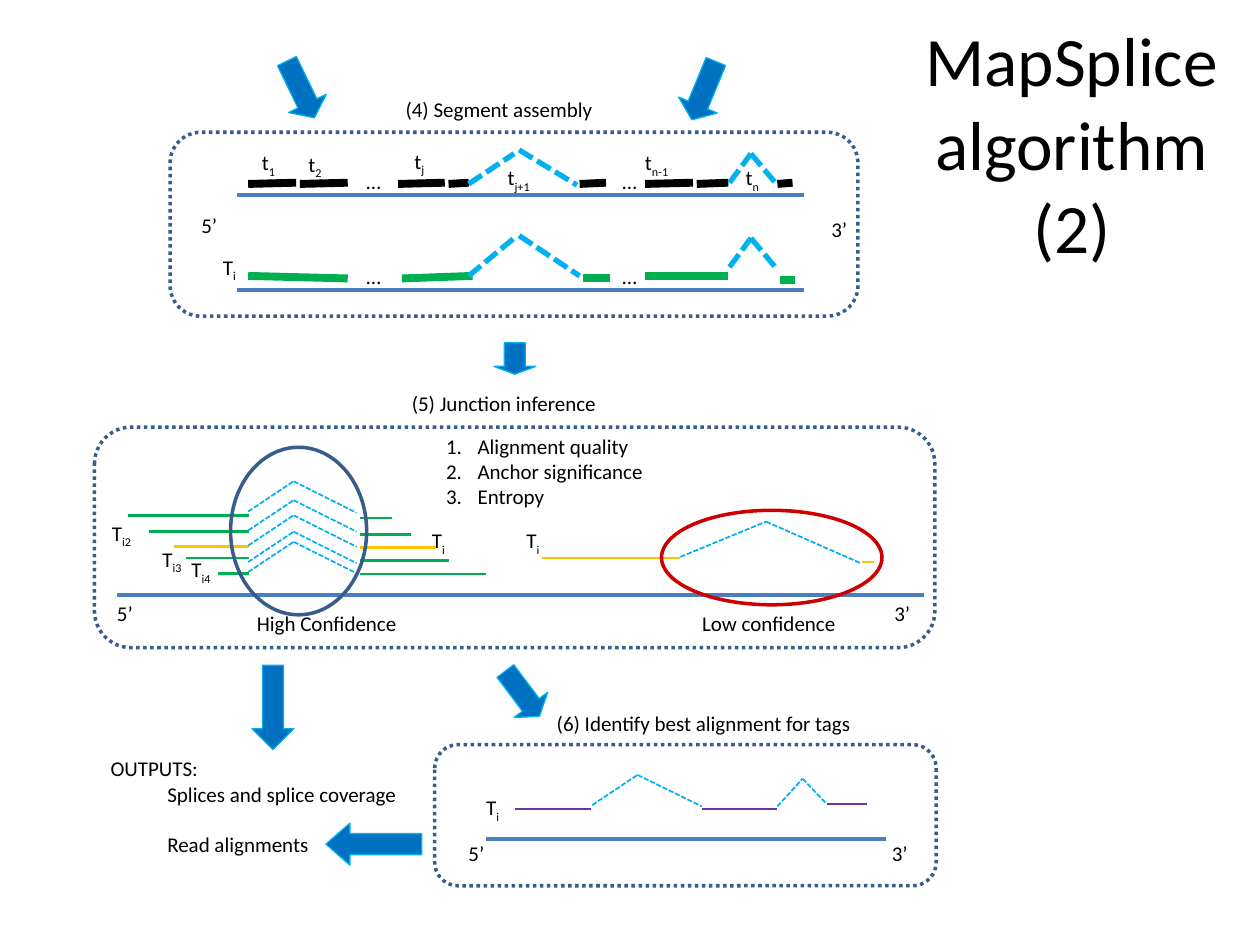
from lxml.etree import SubElement
from pptx import Presentation
from pptx.dml.color import RGBColor
from pptx.enum.dml import MSO_LINE
from pptx.enum.shapes import MSO_CONNECTOR, MSO_SHAPE as SHAPE
from pptx.enum.text import MSO_ANCHOR, MSO_AUTO_SIZE, PP_ALIGN
from pptx.oxml.ns import qn
from pptx.util import Inches, Pt

COLS, ROWS = 100, 75
C = {"text": "000000", "genome": "4B7EBC", "frame": "385D8A", "tag": "000000",
     "green": "00B050", "gold": "FFC000", "purple": "7030A0", "red": "CC0000",
     "splice": "00B0F0", "arrow": "0070C0"}

prs = Presentation()
prs.slide_width, prs.slide_height = Inches(10), Inches(7.5)
s = prs.slides.add_slide(prs.slide_layouts[1])


def col(n):
    return round(prs.slide_width * n / COLS)


def row(n):
    return round(prs.slide_height * n / ROWS)


def place(box, x, y, w, h):
    return col(box[0] + x), row(box[1] + y), col(w), row(h)


def style(obj, values):
    for name, value in values.items():
        setattr(obj, name, value)


def write(p, text, size=12):
    base, _, sub = text.partition("_")
    for part, lowered in ((base, False), (sub, True)):
        if part:
            r = p.add_run()
            r.text = part
            style(r.font, {"size": Pt(size), "name": "Calibri"})
            r.font.color.rgb = RGBColor.from_string(C["text"])
            if lowered:
                r._r.get_or_add_rPr().set("baseline", "-25000")


def label(box, text, x, y, w=5.6, h=3):
    tf = s.shapes.add_textbox(*place(box, x, y, w, h)).text_frame
    tf.word_wrap = True
    write(tf.paragraphs[0], text)
    return tf


def labels(box, items):
    for item in items:
        label(box, *item)


def set_line(obj, color, width, dash=None):
    style(obj.line, {"width": Pt(width), "dash_style": dash})
    obj.line.color.rgb = RGBColor.from_string(C[color])


def path_line(box, points, color, width, dash=None):
    for (x1, y1), (x2, y2) in zip(points, points[1:]):
        c = s.shapes.add_connector(MSO_CONNECTOR.STRAIGHT, *place(box, x1, y1, 0, 0)[:2],
                                   *place(box, x2, y2, 0, 0)[:2])
        set_line(c, color, width, dash)
        SubElement(c._element.spPr, qn("a:effectLst"))


def splice(box, points, width=1):
    path_line(box, points, "splice", width, MSO_LINE.SQUARE_DOT)


def outline(box, kind, x, y, w, h, color, dash=None):
    sp = s.shapes.add_shape(kind, *place(box, x, y, w, h))
    sp.shadow.inherit = False
    sp.fill.background()
    set_line(sp, color, 2, dash)


def frame(box, caption, x, y, w):
    outline(box, SHAPE.ROUNDED_RECTANGLE, 0, 0, *box[2:], "frame", MSO_LINE.ROUND_DOT)
    label(box, caption, x, y, w)


def genome(box, x1, x2, y):
    path_line(box, [(x1, y), (x2, y)], "genome", 2.25)


def arrow(x, y, h, head, angle=0):
    sp = s.shapes.add_shape(SHAPE.DOWN_ARROW, col(x), row(y), col(3.33), row(h))
    sp.shadow.inherit = False
    sp.rotation = angle
    sp.adjustments[1] = head
    sp.fill.solid()
    sp.fill.fore_color.rgb = RGBColor.from_string(C["arrow"])
    set_line(sp, "splice", 0.75)


def segment_assembly(box):
    for y in (5, 12.5):
        genome(box, 5.3, 50.3, y)
        labels(box, [("…", x, y - 2.6, 2.2) for x in (14.6, 34.9)])
    for x1, x2 in ((6.2, 10), (10.3, 14.1), (18.1, 21.8), (22.1, 23.7),
                   (32.5, 34.6), (37.7, 41.5), (41.8, 44.3), (48.2, 49.4)):
        path_line(box, [(x1, 4.1), (x2, 4)], "tag", 4.5)
    for x1, y1, x2, y2 in ((6.2, 11.4, 14.1, 11.6), (18.4, 11.6, 24, 11.4),
                           (32.8, 11.6, 34.9, 11.6), (37.7, 11.4, 44.3, 11.4),
                           (48.4, 11.7, 49.6, 11.7)):
        path_line(box, [(x1, y1), (x2, y2)], "green", 4.5)
    for points in ([(23.7, 4.1), (27.3, 1.7)], [(27.7, 1.4), (32.3, 4.2)],
                   [(44.4, 4), (46.1, 1.7), (48.2, 4.2)],
                   [(23.7, 11.4), (27.3, 8.4)], [(27.7, 8.2), (32.5, 11.4)],
                   [(44.4, 10.7), (46.1, 8.4), (48.2, 10.9)]):
        splice(box, points, 3)
    labels(box, [("t_1", 6.3, 0.9), ("t_2", 10, 1), ("t_j", 18.4, 0.8), ("t_j+1", 25.8, 2.1),
                 ("t_n-1", 36.7, 0.9), ("t_n", 44.7, 2.1), ("T_i", 3.2, 9.2),
                 ("5’", 1.5, 5.9), ("3’", 51.5, 6.2)])
    frame(box, "(4) Segment assembly", 17.7, -3.3, 19.2)


def junction_inference(box):
    genome(box, 1.8, 65.8, 13.3)
    for x1, y1, x2, y2, peak, color in ((2.7, 7, 23.6, 7.2, 4.3, "green"),
                                        (4.3, 8.3, 25.1, 8.5, 5.8, "green"),
                                        (6.3, 9.5, 27.1, 9.55, 7, "gold"),
                                        (7.3, 10.4, 28.1, 10.6, 8.3, "green"),
                                        (9.8, 11.6, 31.1, 11.65, 9.1, "green")):
        path_line(box, [(x1, y1), (12.3, y1)], color, 1.5)
        path_line(box, [(21.1, y2), (x2, y2)], color, 1.5)
        splice(box, [(12.2, peak + 2.4), (15.8, peak), (20.8, peak + 2.5)])
    for x1, x2, y in ((35.5, 46.5, 10.4), (60.9, 61.9, 10.7)):
        path_line(box, [(x1, y), (x2, y)], "gold", 1.5)
    splice(box, [(46.5, 10.3), (53.3, 7.5), (60.8, 10.8)])
    outline(box, SHAPE.OVAL, 10.8, 1.6, 10.8, 13.3, "frame")
    outline(box, SHAPE.OVAL, 45, 6.6, 17.5, 7.5, "red")
    labels(box, [("T_i2", 0.4, 6.9), ("T_i3", 4.4, 9), ("T_i4", 6.7, 9.8), ("T_i", 25.8, 7.5),
                 ("T_i", 33.3, 7.5), ("5’", 0.8, 13.3), ("3’", 62.5, 13.3),
                 ("High Confidence", 11.9, 14.1, 15.4), ("Low confidence", 47.25, 14.1, 15.4)])
    criteria((box[0] + 26.9, box[1], 20.8, 9))
    frame(box, "(5) Junction inference", 24.2, -3.4, 19.7)


def criteria(box):
    body = s.placeholders[1]
    style(body, dict(zip(("left", "top", "width", "height"), place(box, 0, 0, *box[2:]))))
    tf = body.text_frame
    style(tf, {"auto_size": MSO_AUTO_SIZE.NONE, "vertical_anchor": MSO_ANCHOR.TOP})
    for i, text in enumerate(("Alignment quality", "Anchor significance", "Entropy")):
        p = tf.add_paragraph() if i else tf.paragraphs[0]
        p.space_before = Pt(0)
        pPr = p._p.get_or_add_pPr()
        pPr.set("marL", str(Inches(0.25)))
        pPr.set("indent", str(-Inches(0.25)))
        SubElement(pPr, qn("a:buFont"), typeface="+mj-lt")
        SubElement(pPr, qn("a:buAutoNum"), type="arabicPeriod")
        write(p, text)


def best_alignment(box):
    genome(box, 4.1, 35.8, 7.5)
    for x1, x2, y in ((6.4, 12.4, 5.1), (21.2, 27.2, 5.1), (31.1, 34.3, 4.7)):
        path_line(box, [(x1, y), (x2, y)], "purple", 1.5)
    splice(box, [(12.5, 4.8), (16.1, 2.4), (21.2, 4.9)])
    splice(box, [(27.2, 4.9), (29.2, 2.7), (31.1, 4.7)])
    labels(box, [("T_i", 3.1, 3.5), ("5’", 1.7, 7.1), ("3’", 35.3, 7.1)])
    frame(box, "(6) Identify best alignment for tags", 8.7, -3.2, 26.7)


def outputs(box):
    tf = label(box, "OUTPUTS:", 0, 0, *box[2:])
    for text, gap in (("Splices and splice coverage", 0), ("Read alignments", 14.6)):
        p = tf.add_paragraph()
        p.space_before = Pt(gap)
        p._p.get_or_add_pPr().set("marL", str(Inches(0.45)))
        write(p, text)


def title(box, text):
    sp = s.shapes.title
    style(sp, dict(zip(("left", "top", "width", "height"), place(box, 0, 0, *box[2:]))))
    tf = sp.text_frame
    style(tf, {"auto_size": MSO_AUTO_SIZE.NONE, "vertical_anchor": MSO_ANCHOR.MIDDLE})
    tf.paragraphs[0].alignment = PP_ALIGN.CENTER
    write(tf.paragraphs[0], text, 39.6)


title((71.7, 1.7, 26.7, 19.2), "MapSplice algorithm (2)")
segment_assembly((13.5, 10.5, 54.6, 14.6))
junction_inference((7.5, 33.9, 66.7, 17.5))
best_alignment((34.5, 59.1, 39.8, 11.2))
outputs((7.8, 59.5, 28, 11.1))
for spot in ((22.2, 4.6, 5, 0.38, 334.2), (54.2, 4.7, 5, 0.38, 22.4), (39.2, 27.2, 2.5, 0.25),
             (39.8, 52.8, 4.5, 0.34, 323.1), (20, 52.8, 6.7, 0.5), (28, 63.2, 7.6, 0.57, 90)):
    arrow(*spot)
prs.save("out.pptx")
